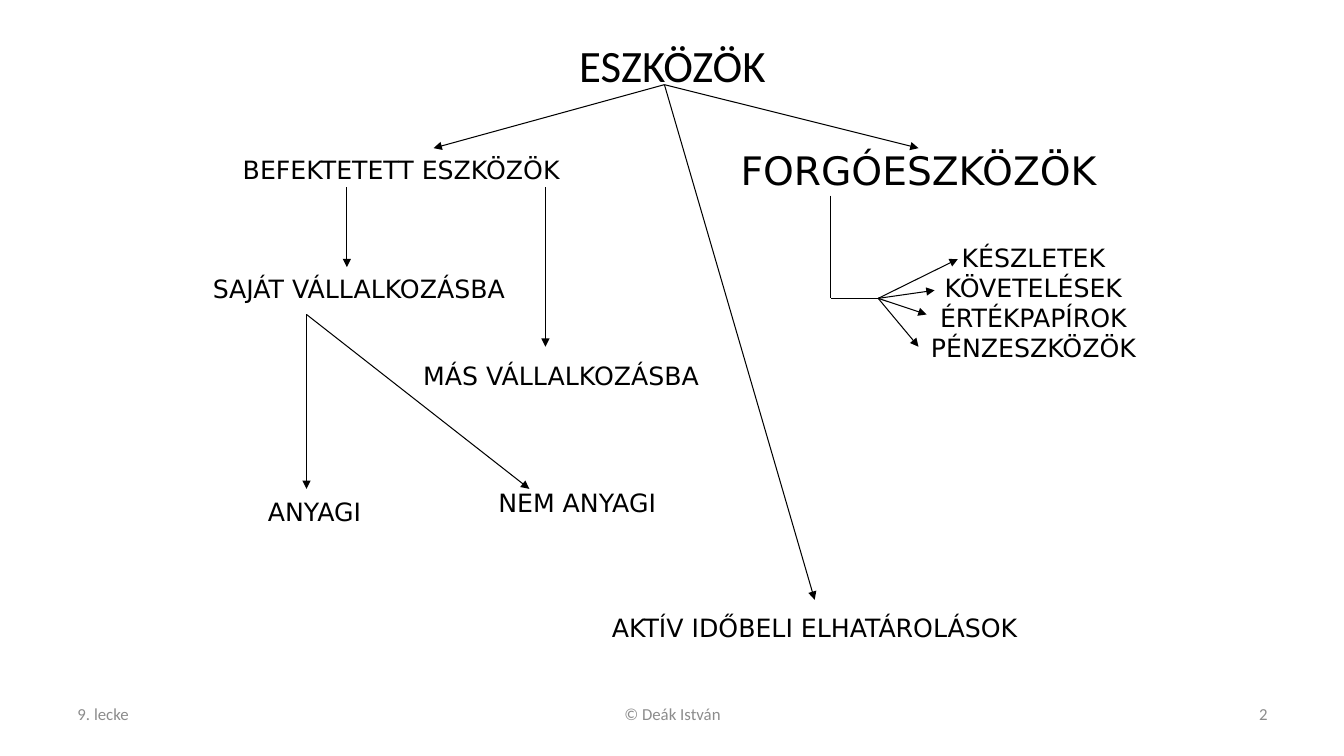
from lxml.etree import SubElement
from pptx import Presentation
from pptx.dml.color import RGBColor
from pptx.enum.shapes import MSO_CONNECTOR
from pptx.enum.text import MSO_ANCHOR, MSO_AUTO_SIZE, PP_ALIGN
from pptx.oxml.ns import qn
from pptx.util import Inches, Pt

COLORS = {"ink": "000000", "footer": "8C8C8C"}

# Boxes are left, top, width, height in inches.
TITLE = ("ESZKÖZÖK", (0.67, 0.32, 12, 0.65))
LABELS = [
    (["BEFEKTETETT ESZKÖZÖK"], (2.26, 1.48, 3.44, 0.4), 18),
    (["FORGÓESZKÖZÖK"], (7.21, 1.4, 3.8, 0.57), 28),
    (["SAJÁT VÁLLALKOZÁSBA"], (1.95, 2.66, 3.22, 0.4), 18),
    (["MÁS VÁLLALKOZÁSBA"], (4.07, 3.53, 2.99, 0.4), 18),
    (["ANYAGI"], (2.53, 4.87, 1.18, 0.4), 18),
    (["NEM ANYAGI"], (4.81, 4.79, 1.83, 0.4), 18),
    (["KÉSZLETEK", "KÖVETELÉSEK", "ÉRTÉKPAPÍROK", "PÉNZESZKÖZÖK"],
     (9.11, 2.35, 2.28, 1.3), 18),
    (["AKTÍV IDŐBELI ELHATÁROLÁSOK"], (5.87, 6.03, 4.42, 0.4), 18),
]
FOOTERS = [
    ("9. lecke", (0.67, 6.83, 3.11, 0.5), PP_ALIGN.LEFT),
    ("© Deák István", (4.56, 6.83, 4.22, 0.5), PP_ALIGN.CENTER),
    ("2", (9.56, 6.83, 3.11, 0.5), PP_ALIGN.RIGHT),
]

# Each branching point with the ends of its arrows.
ARROWS = [
    ((6.59, 0.84), [(4.3, 1.47), (9.11, 1.47), (8.08, 5.95)]),
    ((3.44, 1.86), [(3.44, 2.65)]),
    ((5.41, 1.86), [(5.41, 3.44)]),
    ((3.04, 3.12), [(3.04, 4.85), (5.25, 4.85)]),
    ((8.71, 2.96), [(9.5, 2.57), (9.27, 2.88), (9.19, 3.12), (9.11, 3.44)]),
]
CURRENT_ASSETS_ELBOW = [(8.24, 1.94), (8.24, 2.96), (8.71, 2.96)]


def set_all(target, values):
    for name, value in values.items():
        setattr(target, name, value)


def place(shape, box):
    names = ("left", "top", "width", "height")
    set_all(shape, dict(zip(names, map(Inches, box))))


def write(shape, lines, font, size, color, align=PP_ALIGN.CENTER, **frame_values):
    frame = shape.text_frame
    frame.text = "\n".join(lines)
    set_all(frame, frame_values)
    for paragraph in frame.paragraphs:
        paragraph.alignment = align
        run_font = paragraph.runs[0].font
        set_all(run_font, {"name": font, "size": Pt(size)})
        run_font.color.rgb = RGBColor.from_string(COLORS[color])


def add_text(slide, box, *text, **options):
    shape = slide.shapes.add_textbox(*map(Inches, box))
    write(shape, *text, **options)


def add_line(slide, start, end, arrow=True):
    connector = slide.shapes.add_connector(
        MSO_CONNECTOR.STRAIGHT, *map(Inches, start + end))
    connector.line.width = Pt(0.75)
    connector.line.color.rgb = RGBColor.from_string(COLORS["ink"])
    properties = connector._element.spPr
    if arrow:
        SubElement(properties.find(qn("a:ln")), qn("a:tailEnd"), type="triangle")
    SubElement(properties, qn("a:effectLst"))


def main():
    presentation = Presentation()
    set_all(presentation, {"slide_width": Inches(13.33), "slide_height": Inches(7.5)})
    slide = presentation.slides.add_slide(presentation.slide_layouts[5])

    title, title_box = TITLE
    place(slide.shapes.title, title_box)
    write(slide.shapes.title, [title], "Calibri", 32, "ink",
          vertical_anchor=MSO_ANCHOR.TOP, auto_size=MSO_AUTO_SIZE.NONE)

    for lines, box, size in LABELS:
        add_text(slide, box, lines, "DejaVu Sans", size, "ink",
                 word_wrap=False, auto_size=MSO_AUTO_SIZE.SHAPE_TO_FIT_TEXT)
    for text, box, align in FOOTERS:
        add_text(slide, box, [text], "Calibri", 12, "footer", align,
                 word_wrap=True, vertical_anchor=MSO_ANCHOR.MIDDLE)

    for start, ends in ARROWS:
        for end in ends:
            add_line(slide, start, end)
    for start, end in zip(CURRENT_ASSETS_ELBOW, CURRENT_ASSETS_ELBOW[1:]):
        add_line(slide, start, end, arrow=False)

    presentation.save("out.pptx")


if __name__ == "__main__":
    main()
